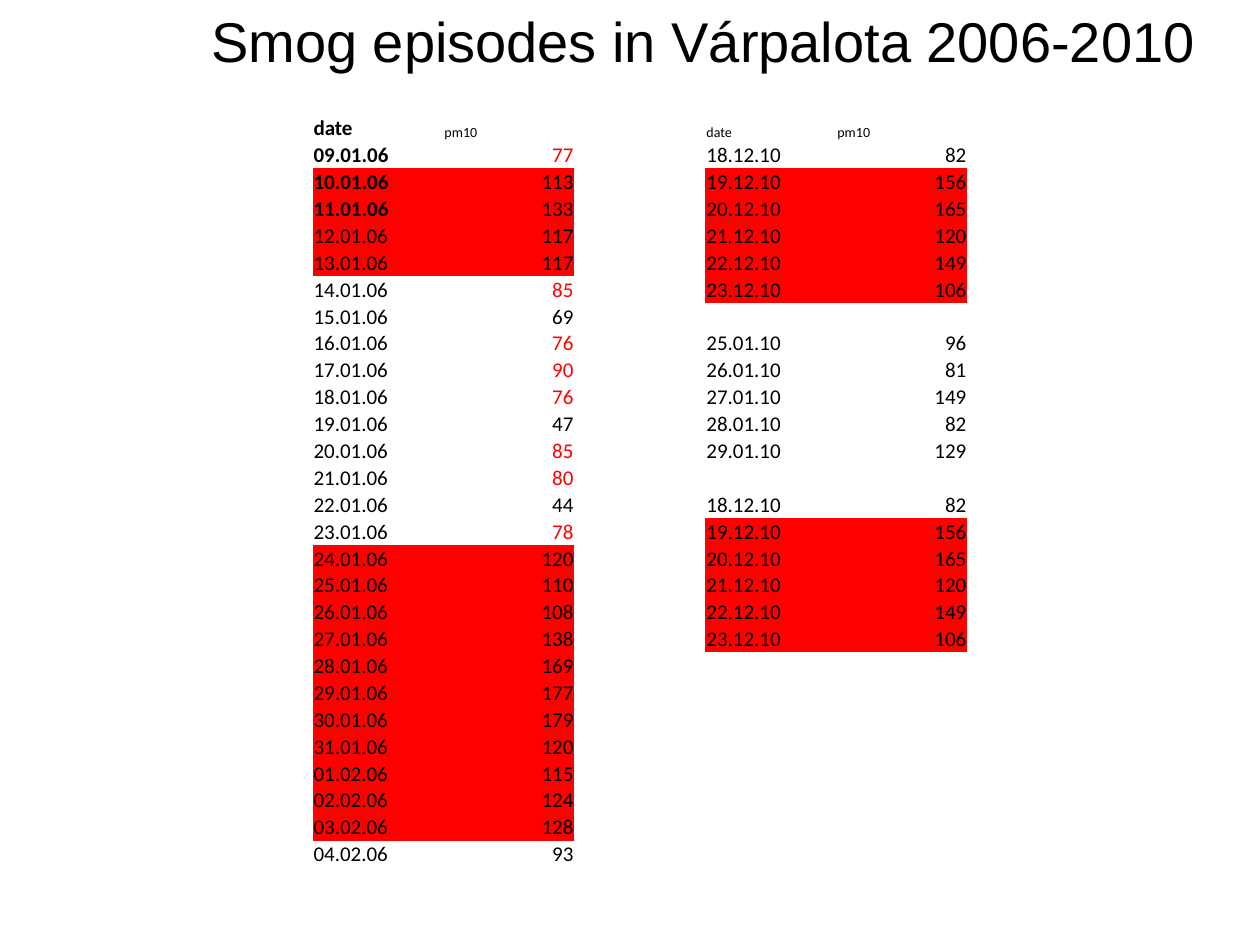
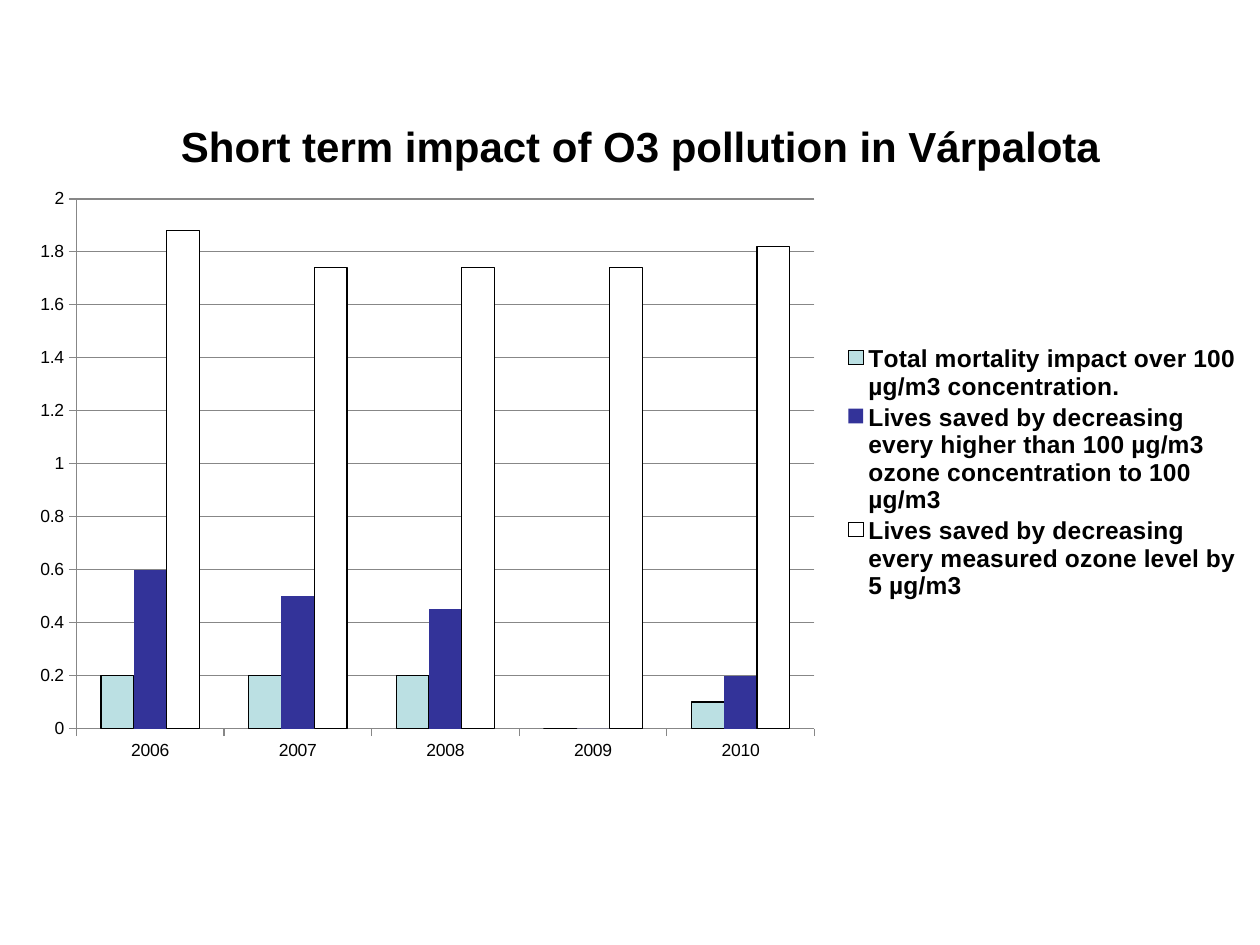
from dataclasses import dataclass
from lxml.etree import SubElement
from pptx import Presentation
from pptx.chart.data import CategoryChartData
from pptx.dml.color import RGBColor
from pptx.enum.chart import XL_CHART_TYPE, XL_LEGEND_POSITION, XL_TICK_MARK
from pptx.enum.text import MSO_ANCHOR, PP_ALIGN
from pptx.oxml import parse_xml
from pptx.oxml.ns import nsdecls, qn
from pptx.util import Cm, Pt


@dataclass(frozen=True)
class Theme:
    black: RGBColor = RGBColor(0, 0, 0)
    white: RGBColor = RGBColor(255, 255, 255)
    red: RGBColor = RGBColor(255, 0, 0)
    grid: RGBColor = RGBColor(0x87, 0x87, 0x87)
    pale: RGBColor = RGBColor(0xBB, 0xE0, 0xE3)
    navy: RGBColor = RGBColor(0x33, 0x33, 0x99)
    sans: str = "Arial"
    cells: str = "Calibri"
    big: int = 32
    mid: int = 24
    key: int = 14
    body: int = 12
    axis: int = 10
    small: int = 8


theme = Theme()


def write(frame, text, size=theme.body, font=theme.cells, color=theme.black,
          bold=False, align=PP_ALIGN.LEFT):
    line = frame.paragraphs[0]
    line.alignment = align
    run = line.add_run()
    run.text = text
    run.font.size = Pt(size)
    run.font.name = font
    run.font.bold = bold
    run.font.color.rgb = color


def place(part, spot, box, inner=False):
    """Give a chart part a fixed box, as shares of the chart."""
    for old in part.findall(qn("c:layout")):
        part.remove(old)
    target = '<c:layoutTarget val="inner"/>' if inner else ""
    modes = "".join(f'<c:{k}Mode val="edge"/>' for k in "xy")
    sides = "".join(f'<c:{k} val="{v}"/>' for k, v in zip("xywh", box))
    part.insert(spot, parse_xml(
        f'<c:layout {nsdecls("c")}><c:manualLayout>{target}{modes}{sides}'
        "</c:manualLayout></c:layout>"))


deck = Presentation()
deck.slide_width, deck.slide_height = Cm(25.4), Cm(19.05)

# Slides and their titles
heads = [
    ("Smog episodes in Várpalota 2006-2010", theme.big, False, 2.97, 0),
    ("Short term impact of O3 pollution in Várpalota", theme.mid, True, 1.7, 2.13),
]
slides = []
for text, size, bold, left, top in heads:
    slide = deck.slides.add_slide(deck.slide_layouts[5])
    title = slide.shapes.title
    title.left, title.top = Cm(left), Cm(top)
    title.width, title.height = Cm(22.43), Cm(1.6)
    title.text_frame.vertical_anchor = MSO_ANCHOR.MIDDLE
    write(title.text_frame, text, size=size, font=theme.sans, bold=bold,
          align=PP_ALIGN.CENTER)
    slides.append(slide)
smog, ozone = slides

# Smog days: date and pm10, by table row
winter = [f"{day:02}.01.06" for day in range(9, 32)]
winter += [f"{day:02}.02.06" for day in range(1, 5)]
levels = [77, 113, 133, 117, 117, 85, 69, 76, 90, 76, 47, 85, 80, 44, 78, 120,
          110, 108, 138, 169, 177, 179, 120, 115, 124, 128, 93]
first = dict(enumerate(zip(winter, levels), 1))

late = [(f"{day}.12.10", level)
        for day, level in enumerate([82, 156, 165, 120, 149, 106], 18)]
cold = [(f"{day}.01.10", level)
        for day, level in enumerate([96, 81, 149, 82, 129], 25)]
second = {}
for start, group in [(1, late), (8, cold), (14, late)]:
    second.update(enumerate(group, start))

# Columns, days, filled rows, rows with red values, rows with bold dates
blocks = [
    (0, first, {*range(2, 6), *range(16, 27)},
     {1, 6, 8, 9, 10, 12, 13, 15}, {1, 2, 3}),
    (3, second, {*range(2, 7), *range(15, 20)}, set(), set()),
]

# Smog table
rows, cols = 28, 5
frame = smog.shapes.add_table(rows, cols, Cm(6.3), Cm(2.31), Cm(13.2), Cm(15.19))
table = frame.table
table.first_row = table.horz_banding = False
style = next(frame.element.iter(qn("a:tableStyleId")))
style.text = "{2D5ABB26-0587-4C30-8999-92F81FD0307C}"
for col in table.columns:
    col.width = Cm(2.64)
for row in table.rows:
    row.height = Cm(15.19 / rows)
for cell in table.iter_cells():
    cell.fill.background()
    cell.vertical_anchor = MSO_ANCHOR.BOTTOM
    cell.margin_left = cell.margin_right = cell.margin_top = Cm(0.02)
    cell.margin_bottom = 0

write(table.cell(0, 0).text_frame, "date", bold=True)
for col, text in [(1, "pm10"), (3, "date"), (4, "pm10")]:
    write(table.cell(0, col).text_frame, text, size=theme.small)

for col, days, filled, warm, strong in blocks:
    for row, (date, level) in days.items():
        pair = table.cell(row, col), table.cell(row, col + 1)
        write(pair[0].text_frame, date, bold=row in strong)
        write(pair[1].text_frame, str(level), align=PP_ALIGN.RIGHT,
              color=theme.red if row in warm else theme.black)
        if row in filled:
            for cell in pair:
                cell.fill.solid()
                cell.fill.fore_color.rgb = theme.red

# Small type in blank cells keeps the rows low
for cell in table.iter_cells():
    if not cell.text:
        line = cell.text_frame.paragraphs[0]
        SubElement(line._p, qn("a:endParaRPr"), sz=str(theme.small * 100))

# Ozone chart
data = CategoryChartData()
data.categories = [str(year) for year in range(2006, 2011)]
data.add_series("Total mortality impact over 100 µg/m3 concentration.",
                [0.2, 0.2, 0.2, 0, 0.1])
data.add_series("Lives saved by decreasing every higher than 100 µg/m3 "
                "ozone concentration to 100 µg/m3", [0.6, 0.5, 0.45, 0, 0.2])
data.add_series("Lives saved by decreasing every measured ozone level by 5 µg/m3",
                [1.88, 1.74, 1.74, 1.74, 1.82])
chart = ozone.shapes.add_chart(XL_CHART_TYPE.COLUMN_CLUSTERED, Cm(0.3), Cm(3.53),
                               Cm(24.8), Cm(12), data).chart
chart.has_title = False
chart.font.name = theme.sans
chart.font.size = Pt(theme.axis)
chart.font.color.rgb = theme.black

# Bars
plot = chart.plots[0]
plot.gap_width, plot.overlap = 150, 0
plot.vary_by_categories = False
looks = [(theme.pale, True), (theme.navy, False), (theme.white, True)]
for bars, (color, edge) in zip(plot.series, looks):
    bars.invert_if_negative = False
    bars.format.fill.solid()
    bars.format.fill.fore_color.rgb = color
    if edge:
        bars.format.line.color.rgb = theme.black
        bars.format.line.width = Pt(0.75)
    else:
        bars.format.line.fill.background()

# Axes
scale = chart.value_axis
scale.minimum_scale, scale.maximum_scale, scale.major_unit = 0, 2, 0.2
scale.has_major_gridlines = True
scale.tick_labels.number_format = "General"
scale.tick_labels.number_format_is_linked = False
for axis in (scale, chart.category_axis):
    axis.major_tick_mark = XL_TICK_MARK.OUTSIDE
for part in (scale, chart.category_axis, scale.major_gridlines):
    part.format.line.color.rgb = theme.grid
    part.format.line.width = Pt(0.75)

# Legend
chart.has_legend = True
legend = chart.legend
legend.position = XL_LEGEND_POSITION.RIGHT
legend.include_in_layout = False
legend.font.name = theme.sans
legend.font.size = Pt(theme.key)
legend.font.bold = True
legend.font.color.rgb = theme.black

root = chart.element
place(next(root.iter(qn("c:plotArea"))), 0, (0.05, 0.04, 0.6, 0.89), inner=True)
place(next(root.iter(qn("c:legend"))), 1, (0.67, 0.28, 0.33, 0.44))

deck.save("out.pptx")
